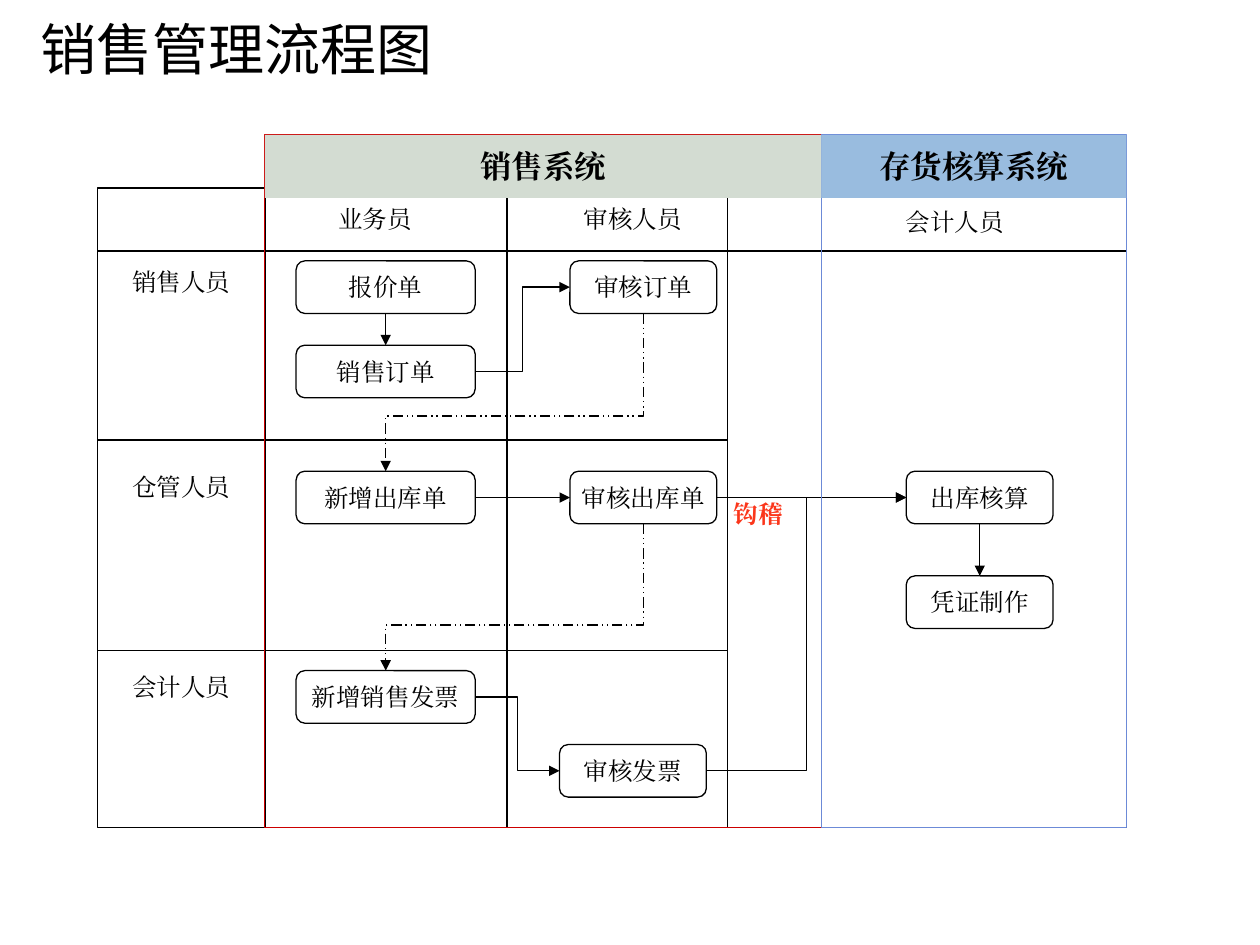
import pptx
import pptx.dml.color
import pptx.enum.dml
import pptx.enum.shapes
import pptx.enum.text
import pptx.oxml
import pptx.oxml.ns
import pptx.util
from pptx.util import Cm

SHAPE = pptx.enum.shapes.MSO_SHAPE
CONNECTOR = pptx.enum.shapes.MSO_CONNECTOR
ANCHOR = pptx.enum.text.MSO_ANCHOR
ALIGN = pptx.enum.text.PP_ALIGN
DASH = pptx.enum.dml.MSO_LINE.DASH_DOT_DOT
HEADING_FONT = "Noto Sans CJK SC"
BODY_FONT = "Times New Roman"
TOP, LEFT, BOTTOM, RIGHT = range(4)
ROLE_LINE, HEADER_LINE = 1.07, 2.34
SALES, REVIEW, LINKING, ACCOUNTING = 3.38, 8.26, 12.7, 14.6


def color(value):
    return pptx.dml.color.RGBColor.from_string(value)


def append_xml(parent, tag, attributes=""):
    namespace = pptx.oxml.ns.nsdecls("a")
    element = pptx.oxml.parse_xml(f"<a:{tag} {namespace} {attributes}/>")
    parent.append(element)
    return element


def write(shape, text, size, font_name=BODY_FONT, ink="000000", bold=False,
          align=ALIGN.CENTER, anchor=ANCHOR.MIDDLE, wrap=False):
    frame = shape.text_frame
    frame.word_wrap = wrap
    frame.vertical_anchor = anchor
    paragraph = frame.paragraphs[0]
    paragraph.alignment = align
    run = paragraph.add_run()
    run.text = text
    run.font.size = pptx.util.Pt(size)
    run.font.bold = bold
    run.font.color.rgb = color(ink)
    run.font.name = font_name
    append_xml(run.font._element, "ea", f'typeface="{font_name}"')


def add_box(slide, kind, left, top, width, height, fill=None, line=None):
    shape = slide.shapes.add_shape(kind, Cm(left), Cm(top), Cm(width), Cm(height))
    shape.shadow.inherit = False
    if fill:
        shape.fill.solid()
        shape.fill.fore_color.rgb = color(fill)
    else:
        shape.fill.background()
    if line:
        shape.line.color.rgb = color(line)
        shape.line.width = pptx.util.Pt(0.75)
    else:
        shape.line.fill.background()
    return shape


def add_line(slide, kind, x1=0, y1=0, x2=0, y2=0):
    line = slide.shapes.add_connector(kind, Cm(x1), Cm(y1), Cm(x2), Cm(y2))
    line.line.color.rgb = color("000000")
    line.line.width = pptx.util.Pt(0.75)
    append_xml(line._element.spPr, "effectLst")
    return line


def add_arrow(slide, start, start_site, end, end_site, kind=CONNECTOR.STRAIGHT):
    arrow = add_line(slide, kind)
    arrow.begin_connect(start, start_site)
    arrow.end_connect(end, end_site)
    append_xml(arrow.line._get_or_add_ln(), "tailEnd", 'type="triangle"')
    return arrow


def add_return_arrow(slide, start, end, bend):
    arrow = add_arrow(slide, start, BOTTOM, end, TOP, CONNECTOR.ELBOW)
    arrow.line.dash_style = DASH
    across, down = arrow.width, arrow.height
    arrow.left += (across - down) // 2
    arrow.top += (down - across) // 2
    arrow.width, arrow.height = down, across
    properties = arrow._element.spPr
    transform = properties.find(pptx.oxml.ns.qn("a:xfrm"))
    transform.set("rot", "5400000")
    transform.set("flipH", "0")
    geometry = properties.find(pptx.oxml.ns.qn("a:prstGeom"))
    adjustments = geometry.find(pptx.oxml.ns.qn("a:avLst"))
    if adjustments is None:
        adjustments = append_xml(geometry, "avLst")
    append_xml(adjustments, "gd", f'name="adj1" fmla="val {round(bend * 100000)}"')


def add_title(slide, left, top, width, height):
    title = slide.shapes.add_textbox(Cm(left), Cm(top), Cm(width), Cm(height))
    write(title, "销售管理流程图", 32, HEADING_FONT, align=ALIGN.LEFT, wrap=True)


def add_lanes(slide, left, top, width, height):
    add_box(slide, SHAPE.RECTANGLE, left, top + ROLE_LINE, width,
            height - ROLE_LINE, "FFFFFF", "000000")
    for x in (SALES, REVIEW, LINKING):
        add_line(slide, CONNECTOR.STRAIGHT, left + x, top + ROLE_LINE,
                 left + x, top + height)
    for y, length in ((HEADER_LINE, width), (6.15, LINKING), (10.39, LINKING)):
        add_line(slide, CONNECTOR.STRAIGHT, left, top + y, left + length, top + y)

    roles = [
        ("销售人员", 0.43, 2.54, 2.54, 0.84, None),
        ("仓管人员", 0.43, 6.78, 2.54, 0.64, "FFFFFF"),
        ("会计人员", 0.43, 10.8, 2.54, 0.64, "FFFFFF"),
        ("业务员", 4.01, 1.27, 3.18, 0.84, None),
        ("审核人员", 9.32, 1.27, 2.96, 0.84, "FFFFFF"),
        ("会计人员", 15.6, 1.22, 3.38, 1.06, "FFFFFF"),
    ]
    for text, x, y, role_width, role_height, fill in roles:
        role = add_box(slide, SHAPE.ROUNDED_RECTANGLE, left + x, top + y,
                       role_width, role_height, fill)
        write(role, text, 14)


def add_flow(slide, left, top):
    entry, check, account = (4.01, 3.61), (9.53, 2.96), (16.31, 2.96)
    steps = [
        ("报价单", entry, 2.54),
        ("销售订单", entry, 4.24),
        ("审核订单", check, 2.54),
        ("新增出库单", entry, 6.78),
        ("审核出库单", check, 6.78),
        ("新增销售发票", entry, 10.8),
        ("审核发票", (9.32, 2.96), 12.29),
        ("出库核算", account, 6.78),
        ("凭证制作", account, 8.89),
    ]
    step = {}
    for text, (x, width), y in steps:
        step[text] = add_box(slide, SHAPE.ROUNDED_RECTANGLE, left + x, top + y,
                             width, 1.06, "FFFFFF", "000000")
        write(step[text], text, 14)

    for start, end in (("报价单", "销售订单"), ("出库核算", "凭证制作")):
        add_arrow(slide, step[start], BOTTOM, step[end], TOP)
    for start, end in (("新增出库单", "审核出库单"), ("审核出库单", "出库核算")):
        add_arrow(slide, step[start], RIGHT, step[end], LEFT)
    for start, end in (("销售订单", "审核订单"), ("新增销售发票", "审核发票"),
                       ("审核发票", "出库核算")):
        add_arrow(slide, step[start], RIGHT, step[end], LEFT, CONNECTOR.ELBOW)
    add_return_arrow(slide, step["审核订单"], step["新增出库单"], 0.65)
    add_return_arrow(slide, step["审核出库单"], step["新增销售发票"], 0.69)

    matching = slide.shapes.add_textbox(Cm(left + 12.27), Cm(top + 7.21),
                                        Cm(2.11), Cm(0.84))
    write(matching, "钩稽", 14, ink="FB361B", bold=True, anchor=ANCHOR.TOP, wrap=True)


def add_systems(slide, left, top, width, height):
    systems = [
        ("销售系统", SALES, ACCOUNTING, "D3DCD2", "CC0000"),
        ("存货核算系统", ACCOUNTING, width, "99BCDF", "6C8AD7"),
    ]
    for _, start, end, _, border in systems:
        add_box(slide, SHAPE.RECTANGLE, left + start, top, end - start, height,
                line=border)
    for text, start, end, fill, _ in systems:
        header = add_box(slide, SHAPE.RECTANGLE, left + start, top, end - start,
                         1.27, fill)
        write(header, text, 18, bold=True)


def main():
    presentation = pptx.Presentation()
    presentation.slide_width = Cm(25.4)
    presentation.slide_height = Cm(19.05)
    slide = presentation.slides.add_slide(presentation.slide_layouts[6])
    chart_box = (1.96, 2.72, 20.75, 13.97)
    add_title(slide, 0.56, 0, 20.07, 1.93)
    add_lanes(slide, *chart_box)
    add_flow(slide, *chart_box[:2])
    add_systems(slide, *chart_box)
    presentation.save("out.pptx")


if __name__ == "__main__":
    main()
